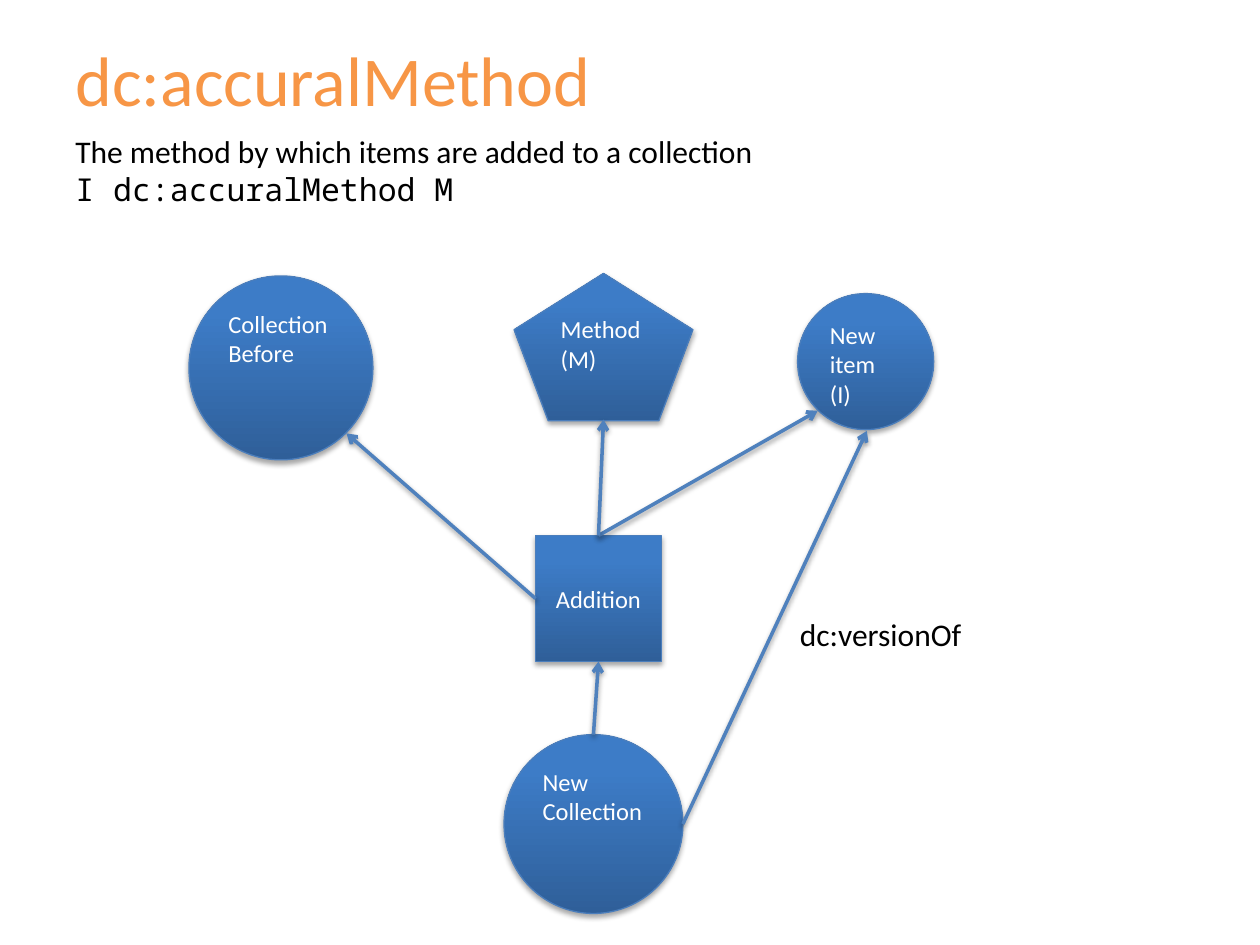
from lxml.etree import SubElement
from pptx import Presentation
from pptx.dml.color import RGBColor
from pptx.enum.shapes import MSO_CONNECTOR, MSO_SHAPE
from pptx.enum.text import MSO_ANCHOR, MSO_AUTO_SIZE, PP_ALIGN
from pptx.oxml.ns import qn
from pptx.util import Inches, Pt

COLORS = {
    "title": "F79646", "text": "000000", "node_text": "FFFFFF",
    "node_dark": "2F5F99", "node_light": "3D7CC7", "outline": "4B7EBC",
    "arrow": "4F81BD", "shadow": "000000",
}


def style_text(paragraph, size, color, font="Calibri"):
    for run in paragraph.runs:
        run.font.name = font
        run.font.size = Pt(size)
        run.font.color.rgb = RGBColor.from_string(COLORS[color])


def add_shadow(shape, distance, opacity):
    """Drop a soft shadow straight down; opacity is in percent."""
    effects = SubElement(shape._element.spPr, qn("a:effectLst"))
    outer = SubElement(effects, qn("a:outerShdw"), blurRad=str(Pt(3.1)),
                       dist=str(Pt(distance)), dir="5400000", rotWithShape="0")
    shade = SubElement(outer, qn("a:srgbClr"), val=COLORS["shadow"])
    SubElement(shade, qn("a:alpha"), val=str(opacity * 1000))


prs = Presentation()
prs.slide_width, prs.slide_height = Inches(10), Inches(7.5)
slide = prs.slides.add_slide(prs.slide_layouts[5])

title = slide.shapes.title
title.left, title.top = Inches(0.5), Inches(0)
title.width, title.height = Inches(7.42), Inches(1.25)
title.text_frame.text = "dc:accuralMethod"
title.text_frame.vertical_anchor = MSO_ANCHOR.MIDDLE
title.text_frame.paragraphs[0].alignment = PP_ALIGN.LEFT
style_text(title.text_frame.paragraphs[0], 40, "title")

# Text boxes: position, size and lines with their fonts
labels = [
    (0.5, 1, 5.63, 1.01, [
        ("The method by which items are added to a collection", "Calibri"),
        ("I dc:accuralMethod M", "Noto Sans Mono")]),
    (6.25, 4.83, 1.51, 0.4, [("dc:versionOf", "Calibri")]),
]
for left, top, width, height, lines in labels:
    label = slide.shapes.add_textbox(Inches(left), Inches(top), Inches(width), Inches(height))
    frame = label.text_frame
    frame.word_wrap = False
    frame.auto_size = MSO_AUTO_SIZE.SHAPE_TO_FIT_TEXT
    frame.text = "\n".join(text for text, _ in lines)
    for paragraph, (_, font) in zip(frame.paragraphs, lines):
        style_text(paragraph, 18, "text", font)

# Nodes: text, shape, position and size
nodes = [
    ("Addition", MSO_SHAPE.RECTANGLE, 4.25, 4.25, 1, 1),
    ("Method\n(M)", MSO_SHAPE.REGULAR_PENTAGON, 4.08, 2.17, 1.42, 1.17),
    ("Collection Before", MSO_SHAPE.OVAL, 1.5, 2.19, 1.46, 1.46),
    ("New item (I)", MSO_SHAPE.OVAL, 6.33, 2.33, 1.08, 1.08),
    ("New Collection", MSO_SHAPE.OVAL, 4, 5.83, 1.42, 1.42),
]
for text, kind, left, top, width, height in nodes:
    node = slide.shapes.add_shape(kind, Inches(left), Inches(top), Inches(width), Inches(height))
    node.fill.gradient()
    node.fill.gradient_angle = 90
    gradient = [(0, "node_dark"), (0.8, "node_light")]
    for stop, (position, color) in zip(node.fill.gradient_stops, gradient):
        stop.position = position
        stop.color.rgb = RGBColor.from_string(COLORS[color])
    node.line.color.rgb = RGBColor.from_string(COLORS["outline"])
    node.line.width = Pt(0.75)
    add_shadow(node, 1.8, 35)

    centred = kind == MSO_SHAPE.RECTANGLE
    frame = node.text_frame
    frame.text = text
    frame.vertical_anchor = MSO_ANCHOR.MIDDLE if centred else MSO_ANCHOR.TOP
    for paragraph in frame.paragraphs:
        paragraph.alignment = PP_ALIGN.CENTER if centred else PP_ALIGN.LEFT
        style_text(paragraph, 14, "node_text")

# Arrows: start and end points
arrows = [
    (4.71, 5.83, 4.75, 5.25),  # New Collection to Addition
    (4.75, 4.25, 6.49, 3.26),  # Addition to New item
    (4.75, 4.25, 4.79, 3.33),  # Addition to Method
    (4.25, 4.75, 2.75, 3.44),  # Addition to Collection Before
    (5.42, 6.54, 6.88, 3.42),  # New Collection to New item
]
for points in arrows:
    arrow = slide.shapes.add_connector(MSO_CONNECTOR.STRAIGHT, *map(Inches, points))
    arrow.line.color.rgb = RGBColor.from_string(COLORS["arrow"])
    arrow.line.width = Pt(2)
    SubElement(arrow.line._get_or_add_ln(), qn("a:tailEnd"), type="arrow")
    add_shadow(arrow, 1.6, 38)

prs.save("out.pptx")
